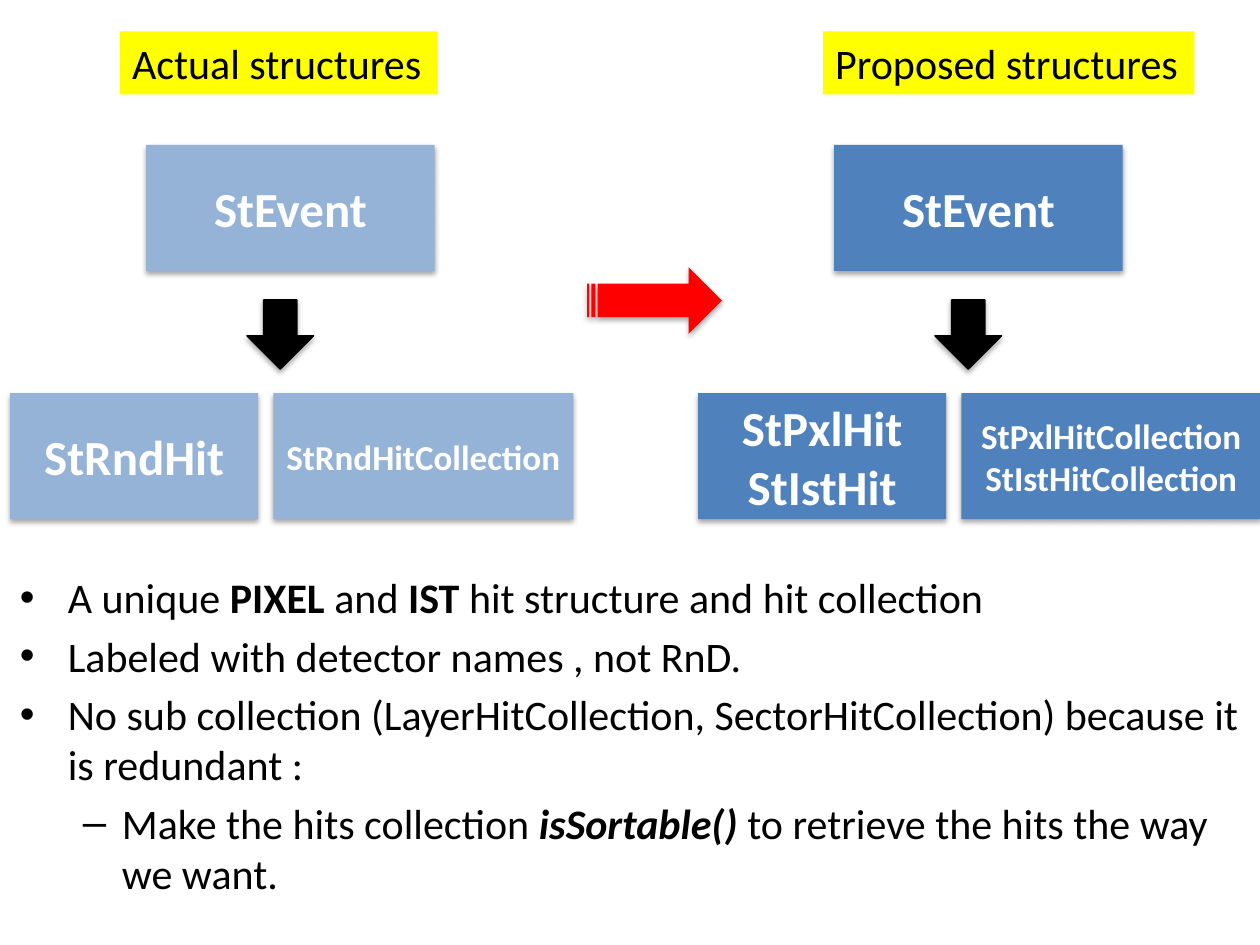
import lxml.etree
import pptx
import pptx.dml.color
import pptx.enum.shapes
import pptx.enum.text
import pptx.oxml.ns
import pptx.util

RGB = pptx.dml.color.RGBColor
PALE = RGB(0x95, 0xB3, 0xD7)
BLUE = RGB(0x4F, 0x81, 0xBD)
BLACK = RGB(0, 0, 0)
WHITE = RGB(255, 255, 255)
RED = RGB(255, 0, 0)
YELLOW = RGB(255, 255, 0)

KIND = pptx.enum.shapes.MSO_SHAPE
ALIGN = pptx.enum.text.PP_ALIGN
FONT = "Calibri"
WIDTH = pptx.util.Inches(10)
HEIGHT = pptx.util.Inches(7.5)
COLS, ROWS = 100, 75
SHIFT = 54.6

NOTES = [
    (0, [("A unique ", ""), ("PIXEL", "b"), (" and ", ""), ("IST ", "b"),
         ("hit structure and hit collection", "")]),
    (0, [("Labeled with detector names , not RnD.", "")]),
    (0, [("No sub collection (LayerHitCollection, SectorHitCollection) "
          "because it is redundant :", "")]),
    (1, [("Make the hits collection ", ""), ("isSortable() ", "bi"),
         ("to retrieve the hits the way we want.", "")]),
]
LEVELS = [("•", 0.38, -0.38), ("–", 0.81, -0.31)]


def place(col, row, cols, rows):
    """Turn grid columns and rows into slide lengths."""
    wide, high = WIDTH / COLS, HEIGHT / ROWS
    return [int(n) for n in (col * wide, row * high, cols * wide, rows * high)]


def node(parent, tag, **attrs):
    """Append an XML child with the given attributes."""
    return lxml.etree.SubElement(parent, pptx.oxml.ns.qn(tag), attrs)


def style(run, size, color, marks=""):
    """Set the font of one run."""
    run.font.name = FONT
    run.font.size = pptx.util.Pt(size)
    run.font.color.rgb = color
    run.font.bold = "b" in marks
    run.font.italic = "i" in marks


def shade(shape):
    """Give a shape a soft shadow below it."""
    effects = shape.element.spPr.find(pptx.oxml.ns.qn("a:effectLst"))
    shadow = node(effects, "a:outerShdw", blurRad="40000", dist="23000",
                  dir="5400000", rotWithShape="0")
    color = node(shadow, "a:srgbClr", val="000000")
    node(color, "a:alpha", val="35000")


def block(slide, kind, spot, fill, shadow=True):
    """Draw a plain filled shape."""
    shape = slide.shapes.add_shape(kind, *place(*spot))
    shape.shadow.inherit = False
    shape.fill.solid()
    shape.fill.fore_color.rgb = fill
    shape.line.fill.background()
    if shadow:
        shade(shape)
    return shape


def write(shape, text, size, color, marks, align):
    """Fill a shape with evenly styled text."""
    shape.text_frame.text = text
    for line in shape.text_frame.paragraphs:
        line.alignment = align
        for run in line.runs:
            style(run, size, color, marks)


def box(slide, spot, fill, text, size):
    """Draw a class box with bold centred text."""
    shape = block(slide, KIND.RECTANGLE, spot, fill)
    write(shape, text, size, WHITE, "b", ALIGN.CENTER)


def label(slide, spot, text):
    """Draw a yellow heading."""
    shape = block(slide, KIND.RECTANGLE, spot, YELLOW, False)
    write(shape, text, 24, BLACK, "", ALIGN.LEFT)
    frame = shape.text_frame
    frame.word_wrap = False
    frame.auto_size = pptx.enum.text.MSO_AUTO_SIZE.SHAPE_TO_FIT_TEXT
    frame.vertical_anchor = pptx.enum.text.MSO_ANCHOR.TOP


def tree(slide, left, fill, hit, group):
    """Draw one event box with its arrow and two child boxes."""
    box(slide, (left + 10.8, 11.5, 22.9, 10), fill, "StEvent", 28)
    box(slide, (left + 20.9, 31.2, 23.8, 10), fill, group, 20)
    box(slide, (left, 31.2, 19.7, 10), fill, hit, 28)
    arrow = block(slide, KIND.DOWN_ARROW, (left + 18.8, 23.8, 5.3, 5.5), BLACK)
    arrow.line.color.rgb = BLACK
    arrow.line.width = pptx.util.Pt(0.75)


def notes(slide, spot):
    """Write the bulleted notes."""
    frame = slide.shapes.add_textbox(*place(*spot)).text_frame
    frame.word_wrap = True
    for index, (level, parts) in enumerate(NOTES):
        line = frame.add_paragraph() if index else frame.paragraphs[0]
        line.level = level
        line.space_before = pptx.util.Pt(4.5)
        sign, margin, indent = LEVELS[level]
        props = line._p.get_or_add_pPr()
        props.set("marL", str(pptx.util.Inches(margin)))
        props.set("indent", str(pptx.util.Inches(indent)))
        node(props, "a:buFont", typeface="Arial")
        node(props, "a:buChar", char=sign)
        for text, marks in parts:
            run = line.add_run()
            run.text = text
            style(run, 24, BLACK, marks)


def main():
    """Build the slide and save it."""
    deck = pptx.Presentation()
    deck.slide_width, deck.slide_height = WIDTH, HEIGHT
    slide = deck.slides.add_slide(deck.slide_layouts[6])
    tree(slide, 0.8, PALE, "StRndHit", "StRndHitCollection")
    tree(slide, 0.8 + SHIFT, BLUE, "StPxlHit\nStIstHit",
         "StPxlHitCollection\nStIstHitCollection")
    block(slide, KIND.STRIPED_RIGHT_ARROW, (46.6, 21.2, 10.7, 5.3), RED)
    label(slide, (9.5, 2.5, 25.2, 5), "Actual structures")
    label(slide, (65.3, 2.5, 29.5, 5), "Proposed structures")
    notes(slide, (0.6, 44.9, 99.2, 25.5))
    deck.save("out.pptx")


if __name__ == "__main__":
    main()
